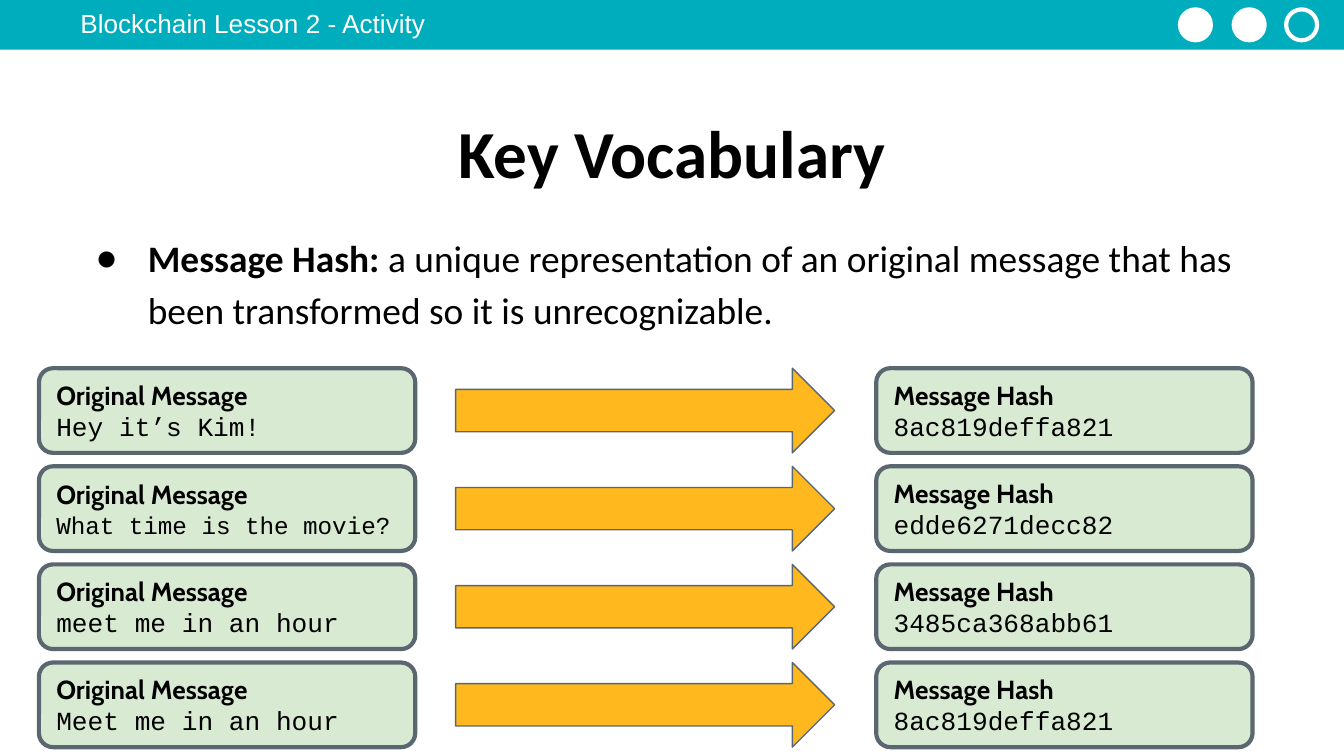
from lxml import etree
from pptx import Presentation
from pptx.dml.color import RGBColor
from pptx.enum.shapes import MSO_SHAPE
from pptx.enum.text import MSO_ANCHOR, MSO_AUTO_SIZE, PP_ALIGN
from pptx.oxml.ns import qn
from pptx.util import Inches, Pt

RECT, OVAL = MSO_SHAPE.RECTANGLE, MSO_SHAPE.OVAL
ROUND, ARROW = MSO_SHAPE.ROUNDED_RECTANGLE, MSO_SHAPE.RIGHT_ARROW
TOP, MIDDLE = MSO_ANCHOR.TOP, MSO_ANCHOR.MIDDLE
LEFT, CENTER = PP_ALIGN.LEFT, PP_ALIGN.CENTER
NO_FIT = MSO_AUTO_SIZE.NONE

TEAL = RGBColor(0x00, 0xAD, 0xBC)
GREEN = RGBColor(0xD9, 0xEA, 0xD3)
GOLD = RGBColor(0xFF, 0xB8, 0x1D)
SLATE = RGBColor(0x5B, 0x67, 0x70)
WHITE = RGBColor(0xFF, 0xFF, 0xFF)
BLACK = RGBColor(0x00, 0x00, 0x00)

PAIRS = [
    ("Hey it’s Kim!", 14, "8ac819deffa821"),
    ("What time is the movie?", 13, "edde6271decc82"),
    ("meet me in an hour", 14, "3485ca368abb61"),
    ("Meet me in an hour", 14, "8ac819deffa821"),
]
WIDE = 10
HIGH = WIDE * 9 / 16
ROW_TOP, ROW_STEP, ROW_HIGH = 2.74, 0.73, 0.63


def add_run(par, text, font="Calibri", size=14, color=BLACK, bold=False):
    run = par.add_run()
    run.text = text
    run.font.name = font
    run.font.size = Pt(size)
    run.font.color.rgb = color
    run.font.bold = bold


def set_frame(frame, anchor=MIDDLE):
    frame.word_wrap = True
    frame.auto_size = NO_FIT
    frame.vertical_anchor = anchor
    frame.margin_left = frame.margin_right = Inches(0.1)
    frame.margin_top = frame.margin_bottom = Inches(0.1)


def set_bullet(par, char, indent, hang):
    props = par._p.get_or_add_pPr()
    props.set("marL", str(Inches(indent)))
    props.set("indent", str(-Inches(hang)))
    color = etree.SubElement(props, qn("a:buClr"))
    etree.SubElement(color, qn("a:srgbClr")).set("val", str(BLACK))
    etree.SubElement(props, qn("a:buChar")).set("char", char)


class Deck:
    """Holds the current slide and the way its elements look."""

    def __init__(self, slide):
        self.slide = slide

    def shape(self, kind, box, fill=None, line=None, width=2.25):
        shape = self.slide.shapes.add_shape(kind, *map(Inches, box))
        shape.shadow.inherit = False
        if fill is None:
            shape.fill.background()
        else:
            shape.fill.solid()
            shape.fill.fore_color.rgb = fill
        if line is None:
            shape.line.fill.background()
        else:
            shape.line.color.rgb = line
            shape.line.width = Pt(width)
        return shape

    def holder(self, index, box, anchor):
        """Move a template placeholder and return its first paragraph."""
        shape = self.slide.placeholders[index]
        shape.left, shape.top, shape.width, shape.height = map(Inches, box)
        set_frame(shape.text_frame, anchor)
        return shape.text_frame.paragraphs[0]

    def title(self, text):
        par = self.holder(0, (0.73, 0.75, 8.54, 0.75), MIDDLE)
        par.alignment = CENTER
        add_run(par, text, size=36, bold=True)

    def body(self, term, meaning):
        par = self.holder(1, (0.5, 1.6, 9, 1.04), TOP)
        par.line_spacing = 1.15
        par.space_before, par.space_after = Pt(0), Pt(10)
        set_bullet(par, "●", 0.5, 0.39)
        add_run(par, term, size=20, bold=True)
        add_run(par, meaning, size=20)

    def header(self, text):
        self.shape(RECT, (-0.01, -0.01, 10.02, 0.38), TEAL)
        for left, fill in ((9.57, None), (9.18, WHITE), (8.78, WHITE)):
            self.shape(OVAL, (left, 0.07, 0.23, 0.23), fill, WHITE)
        box = self.slide.shapes.add_textbox(*map(Inches, (0.5, 0, 5, 0.35)))
        set_frame(box.text_frame)
        add_run(box.text_frame.paragraphs[0], text, font="Arial", color=WHITE)

    def card(self, left, top, label, value, size=14):
        card = self.shape(ROUND, (left, top, 2.8, ROW_HIGH), GREEN, SLATE)
        frame = card.text_frame
        set_frame(frame)
        head, line = frame.paragraphs[0], frame.add_paragraph()
        head.alignment = line.alignment = LEFT
        add_run(head, label, font="Cabin", bold=True)
        add_run(line, value, font="Courier New", size=size)

    def arrow(self, left, top):
        self.shape(ARROW, (left, top, 2.82, ROW_HIGH), GOLD, SLATE, 0.75)


def main():
    prs = Presentation()
    prs.slide_width, prs.slide_height = Inches(WIDE), Inches(HIGH)
    deck = Deck(prs.slides.add_slide(prs.slide_layouts[1]))
    deck.header("Blockchain Lesson 2 - Activity")
    deck.title("Key Vocabulary")
    deck.body("Message Hash: ", "a unique representation of an original message "
              "that has been transformed so it is unrecognizable.")
    for row, (message, size, code) in enumerate(PAIRS):
        top = ROW_TOP + row * ROW_STEP
        deck.card(0.29, top, "Original Message", message, size)
        deck.card(6.52, top, "Message Hash", code)
        deck.arrow(3.39, top)
    prs.save("out.pptx")


if __name__ == "__main__":
    main()
